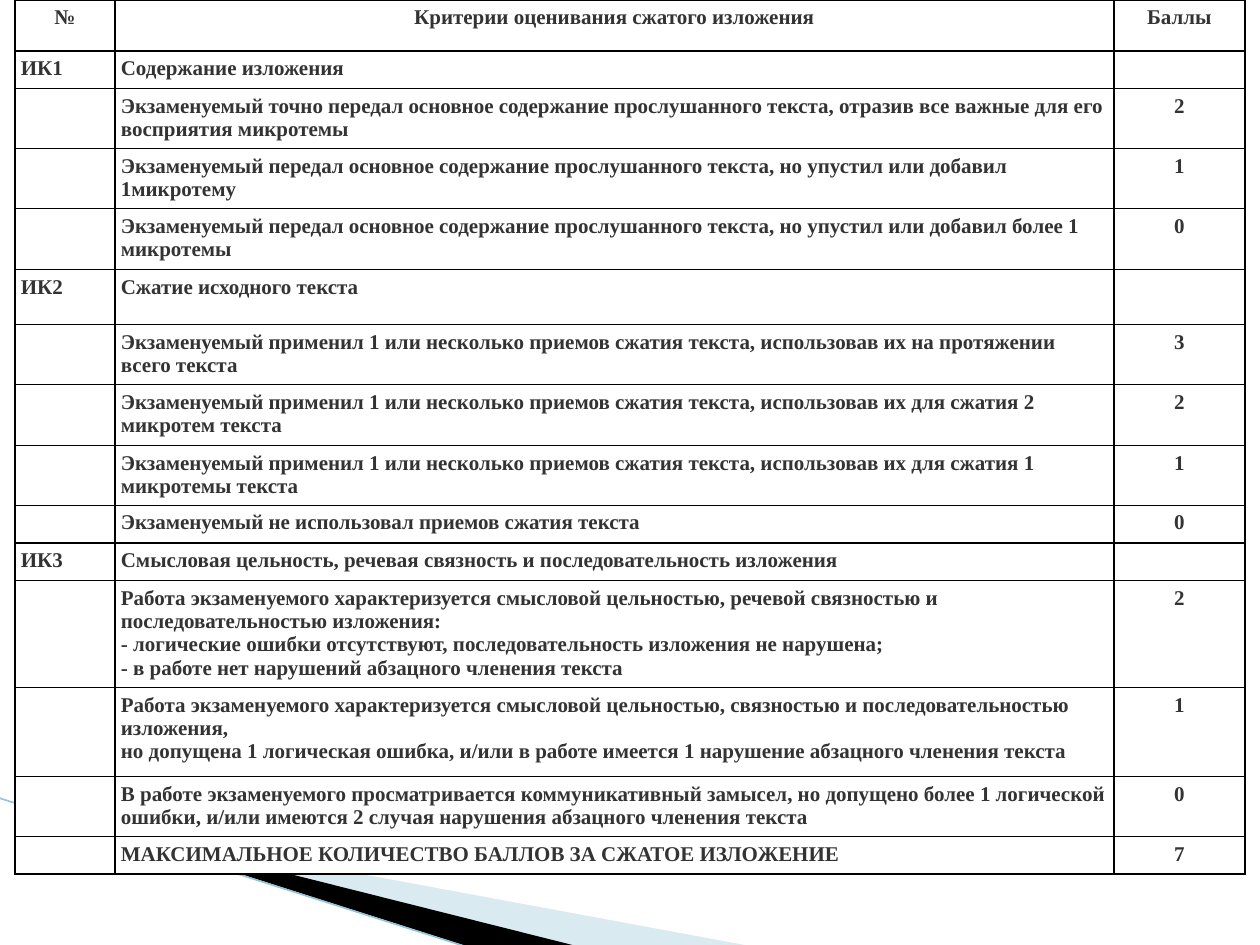
from lxml import etree
from pptx import Presentation
from pptx import util as u
from pptx.dml.color import RGBColor
from pptx.enum import shapes, text
from pptx.oxml import parse_xml
from pptx.oxml.ns import nsdecls, qn

EMU_PER_PX = 914400 / 126
COLORS = {
    "paper": "FFFFFF",
    "ink": "333333",
    "border": "000000",
    "band": "000000",
    "pale": "A0CBDC",
    "edge": "97C5D8",
}
FONT, SIZE = "Times New Roman", 12
COLUMNS = [100, 999, 131]
HEADER = ("№", "Критерии оценивания сжатого изложения", "Баллы")
# Each row: height in px, criterion number, description, points
CRITERIA = [
    (37, "ИК1", "Содержание изложения", ""),
    (60, "", "Экзаменуемый точно передал основное содержание прослушанного текста, "
     "отразив все важные для его восприятия микротемы", "2"),
    (60, "", "Экзаменуемый передал основное содержание прослушанного текста, "
     "но упустил или добавил 1микротему", "1"),
    (61, "", "Экзаменуемый передал основное содержание прослушанного текста, "
     "но упустил или добавил более 1 микротемы", "0"),
    (55, "ИК2", "Сжатие исходного текста", ""),
    (60, "", "Экзаменуемый применил 1 или несколько приемов сжатия текста, "
     "использовав их на протяжении всего текста", "3"),
    (61, "", "Экзаменуемый применил 1 или несколько приемов сжатия текста, "
     "использовав их для сжатия 2 микротем текста", "2"),
    (60, "", "Экзаменуемый применил 1 или несколько приемов сжатия текста, "
     "использовав их для сжатия 1 микротемы текста", "1"),
    (37, "", "Экзаменуемый не использовал приемов сжатия текста", "0"),
    (37, "ИК3", "Смысловая цельность, речевая связность и последовательность изложения", ""),
    (107, "", "Работа экзаменуемого характеризуется смысловой цельностью, речевой связностью "
     "и последовательностью изложения:\n"
     "- логические ошибки отсутствуют, последовательность изложения не нарушена;\n"
     "- в работе нет нарушений абзацного членения текста", "2"),
    (89, "", "Работа экзаменуемого характеризуется смысловой цельностью, связностью "
     "и последовательностью изложения,\n"
     "но допущена 1 логическая ошибка, и/или в работе имеется 1 нарушение "
     "абзацного членения текста", "1"),
    (60, "", "В работе экзаменуемого просматривается коммуникативный замысел, "
     "но допущено более 1 логической ошибки, и/или имеются 2 случая нарушения "
     "абзацного членения текста", "0"),
    (37, "", "МАКСИМАЛЬНОЕ КОЛИЧЕСТВО БАЛЛОВ ЗА СЖАТОЕ ИЗЛОЖЕНИЕ", "7"),
]


def px(value):
    return u.Emu(round(value * EMU_PER_PX))


def rgb(name):
    return RGBColor.from_string(COLORS[name])


def add_wedge(slide, points, color, opacity=100):
    start, *rest = [(px(x), px(y)) for x, y in points]
    builder = slide.shapes.build_freeform(*start, scale=1)
    builder.add_line_segments(rest, close=True)
    wedge = builder.convert_to_shape()
    wedge.shadow.inherit = False
    wedge.fill.solid()
    wedge.fill.fore_color.rgb = rgb(color)
    wedge.line.fill.background()
    if opacity < 100:
        tint = wedge.fill._xPr.find(".//" + qn("a:srgbClr"))
        etree.SubElement(tint, qn("a:alpha")).set("val", str(opacity * 1000))


def add_edge(slide, start, end):
    edge = slide.shapes.add_connector(
        shapes.MSO_CONNECTOR.STRAIGHT, *map(px, start + end))
    edge.line.color.rgb = rgb("edge")
    edge.line.width = u.Pt(0.95)
    etree.SubElement(edge._element.spPr, qn("a:effectLst"))


def style_cell(cell):
    """Black rule on every side, white fill, narrow margins."""
    properties = cell._tc.get_or_add_tcPr()
    for side in "LRTB":
        properties.append(parse_xml(
            f'<a:ln{side} {nsdecls("a")} w="12700"><a:solidFill>'
            f'<a:srgbClr val="{COLORS["border"]}"/></a:solidFill></a:ln{side}>'))
    cell.fill.solid()
    cell.fill.fore_color.rgb = rgb("paper")
    cell.margin_left = cell.margin_right = px(6)
    cell.margin_top = cell.margin_bottom = px(6)


def write_cell(cell, wording, centred):
    paragraph = cell.text_frame.paragraphs[0]
    if not wording:
        paragraph._p.get_or_add_endParaRPr().set("sz", str(SIZE * 100))
        return
    if centred:
        paragraph.alignment = text.PP_ALIGN.CENTER
    for number, line in enumerate(wording.split("\n")):
        if number:
            paragraph.add_line_break()
        run = paragraph.add_run()
        run.text = line
        run.font.name = FONT
        run.font.size = u.Pt(SIZE)
        run.font.bold = True
        run.font.color.rgb = rgb("ink")
    for line_break in paragraph._p.findall(qn("a:br")):
        etree.SubElement(line_break, qn("a:rPr")).set("sz", str(SIZE * 100))


def add_criteria_table(slide):
    rows = [(51, *HEADER)] + CRITERIA
    frame = slide.shapes.add_table(
        len(rows), len(COLUMNS), px(15), px(0),
        px(sum(COLUMNS)), px(sum(row[0] for row in rows)))
    table = frame.table
    table.first_row = table.horz_banding = False
    for column, width in zip(table.columns, COLUMNS):
        column.width = px(width)
    for r, (height, *wordings) in enumerate(rows):
        table.rows[r].height = px(height)
        for c, wording in enumerate(wordings):
            cell = table.cell(r, c)
            style_cell(cell)
            write_cell(cell, wording, centred=r == 0 or c == 2)
    points_title = table.cell(0, 2).text_frame.paragraphs[0]._p.get_or_add_pPr()
    points_title.set("marL", str(px(10)))
    points_title.set("indent", str(px(-10)))


def main():
    deck = Presentation()
    deck.slide_width, deck.slide_height = px(1260), px(945)
    slide = deck.slides.add_slide(deck.slide_layouts[6])
    slide.background.fill.solid()
    slide.background.fill.fore_color.rgb = rgb("paper")
    add_wedge(slide, [(69, 820), (750, 946), (575, 946), (69, 819)], "pale", opacity=40)
    add_wedge(slide, [(67, 818), (576, 946), (469, 947), (68, 819)], "band")
    add_edge(slide, (-1, 798), (467, 947))
    add_criteria_table(slide)
    deck.save("out.pptx")


if __name__ == "__main__":
    main()
